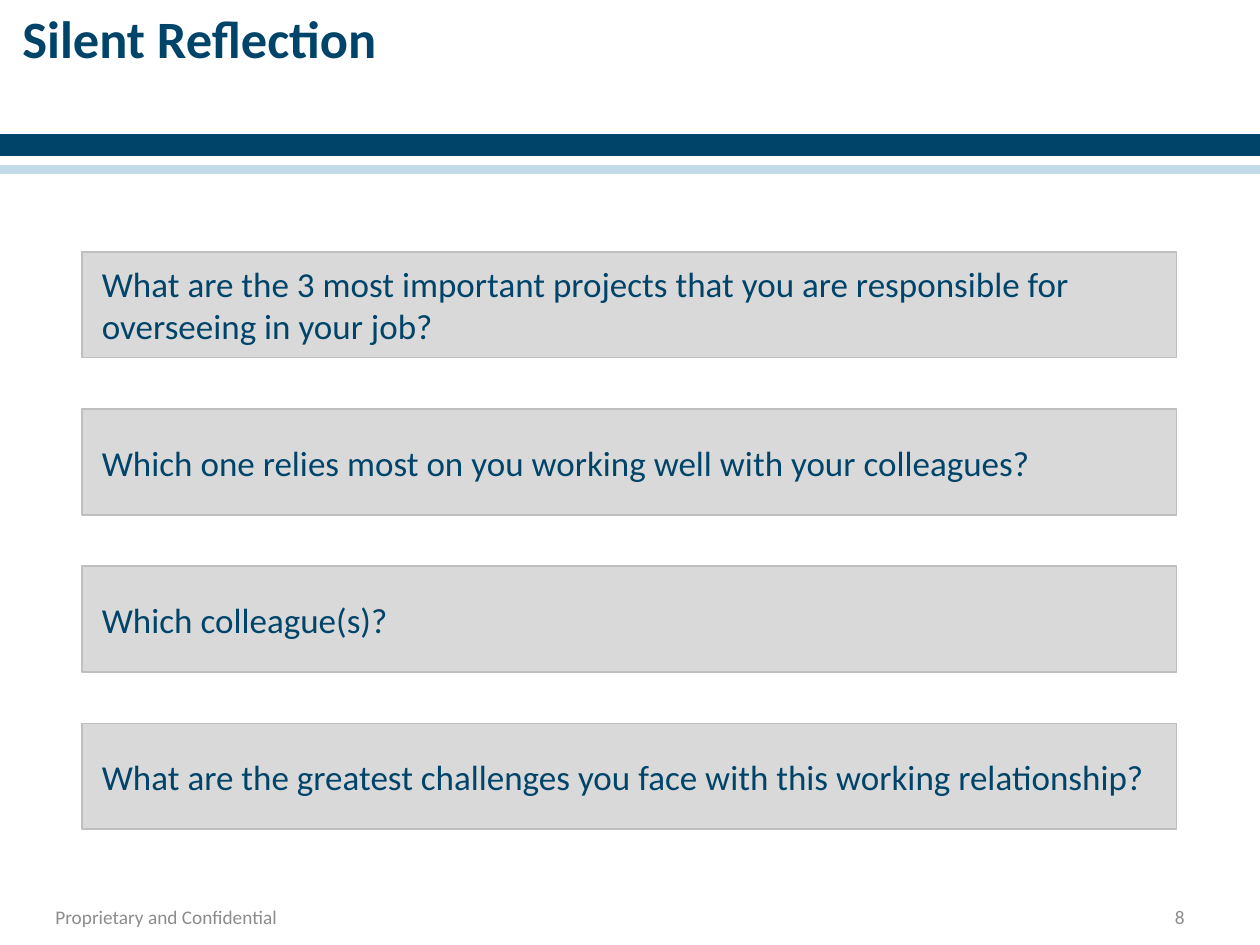
from dataclasses import dataclass

from pptx import Presentation
from pptx.dml.color import RGBColor
from pptx.enum.shapes import MSO_SHAPE
from pptx.enum.text import MSO_ANCHOR, PP_ALIGN
from pptx.util import Inches, Pt

RECTANGLE = MSO_SHAPE.RECTANGLE
TOP, MIDDLE = MSO_ANCHOR.TOP, MSO_ANCHOR.MIDDLE
LEFT, RIGHT = PP_ALIGN.LEFT, PP_ALIGN.RIGHT

COLUMNS, ROWS = 100, 75
PAGE_WIDTH, PAGE_HEIGHT = Inches(10), Inches(7.5)


@dataclass(frozen=True)
class Theme:
    font: str = "Calibri"
    navy: str = "00446A"
    sky: str = "C2DBE8"
    white: str = "FFFFFF"
    panel: str = "D9D9D9"
    panel_edge: str = "BFBFBF"
    muted: str = "8C8C8C"
    title_size: float = 30
    question_size: float = 20
    footer_size: float = 11
    stripe_line: float = 2
    panel_line: float = 0.75


@dataclass(frozen=True)
class Box:
    column: float
    row: float
    columns: float
    rows: float

    def place(self):
        return (
            round(PAGE_WIDTH * self.column / COLUMNS),
            round(PAGE_HEIGHT * self.row / ROWS),
            round(PAGE_WIDTH * self.columns / COLUMNS),
            round(PAGE_HEIGHT * self.rows / ROWS),
        )


THEME = Theme()
QUESTIONS = (
    "What are the 3 most important projects that you are responsible for overseeing in your job?",
    "Which one relies most on you working well with your colleagues?",
    "Which colleague(s)?",
    "What are the greatest challenges you face with this working relationship?",
)


def add_rectangle(page, box, fill, edge, weight):
    rectangle = page.shapes.add_shape(RECTANGLE, *box.place())
    rectangle.shadow.inherit = False
    rectangle.fill.solid()
    rectangle.fill.fore_color.rgb = RGBColor.from_string(fill)
    rectangle.line.color.rgb = RGBColor.from_string(edge)
    rectangle.line.width = Pt(weight)
    return rectangle


def write(shape, text, size, color, anchor=MIDDLE, align=LEFT, bold=False):
    frame = shape.text_frame
    frame.word_wrap = True
    frame.vertical_anchor = anchor
    para = frame.paragraphs[0]
    para.alignment = align
    span = para.add_run()
    span.text = text
    span.font.name = THEME.font
    span.font.size = Pt(size)
    span.font.bold = bold
    span.font.color.rgb = RGBColor.from_string(color)
    return para


def add_stripes(page, box):
    stripes = (
        (0, 2.5, THEME.navy),
        (1.7, 0.5, THEME.white),
        (2.4, 0.5, THEME.sky),
    )
    for offset, rows, color in stripes:
        stripe = Box(box.column, box.row + offset, box.columns, rows)
        add_rectangle(page, stripe, color, color, THEME.stripe_line)


def add_title(page, box):
    title = page.shapes.add_textbox(*box.place())
    write(title, "Silent Reflection", THEME.title_size, THEME.navy, TOP, bold=True)


def add_questions(page, box):
    panel_rows = 8.4
    pitch = (box.rows - panel_rows) / (len(QUESTIONS) - 1)
    for index, question in enumerate(QUESTIONS):
        place = Box(box.column, box.row + index * pitch, box.columns, panel_rows)
        panel = add_rectangle(page, place, THEME.panel, THEME.panel_edge, THEME.panel_line)
        para = write(panel, question, THEME.question_size, THEME.navy)
        para._p.get_or_add_pPr().set("marL", str(Inches(0.06)))


def add_footer(page, box):
    notice_box = Box(box.column, box.row, 25.7, box.rows)
    number_columns = 23.3
    number_box = Box(
        box.column + box.columns - number_columns, box.row, number_columns, box.rows
    )
    notice = page.shapes.add_textbox(*notice_box.place())
    notice.text_frame.margin_left = notice.text_frame.margin_right = Inches(0.11)
    write(notice, "Proprietary and Confidential", THEME.footer_size, THEME.muted)
    number = page.shapes.add_textbox(*number_box.place())
    write(number, "8", THEME.footer_size, THEME.muted, align=RIGHT)


def main():
    deck = Presentation()
    deck.slide_width, deck.slide_height = PAGE_WIDTH, PAGE_HEIGHT
    page = deck.slides.add_slide(deck.slide_layouts[6])
    add_stripes(page, Box(0, 10.8, COLUMNS, 2.9))
    add_footer(page, Box(3.3, 71, 91.7, 3.5))
    add_questions(page, Box(6.5, 20, 86.9, 45.8))
    add_title(page, Box(0.8, 0, 90, 12.5))
    deck.save("out.pptx")


if __name__ == "__main__":
    main()
